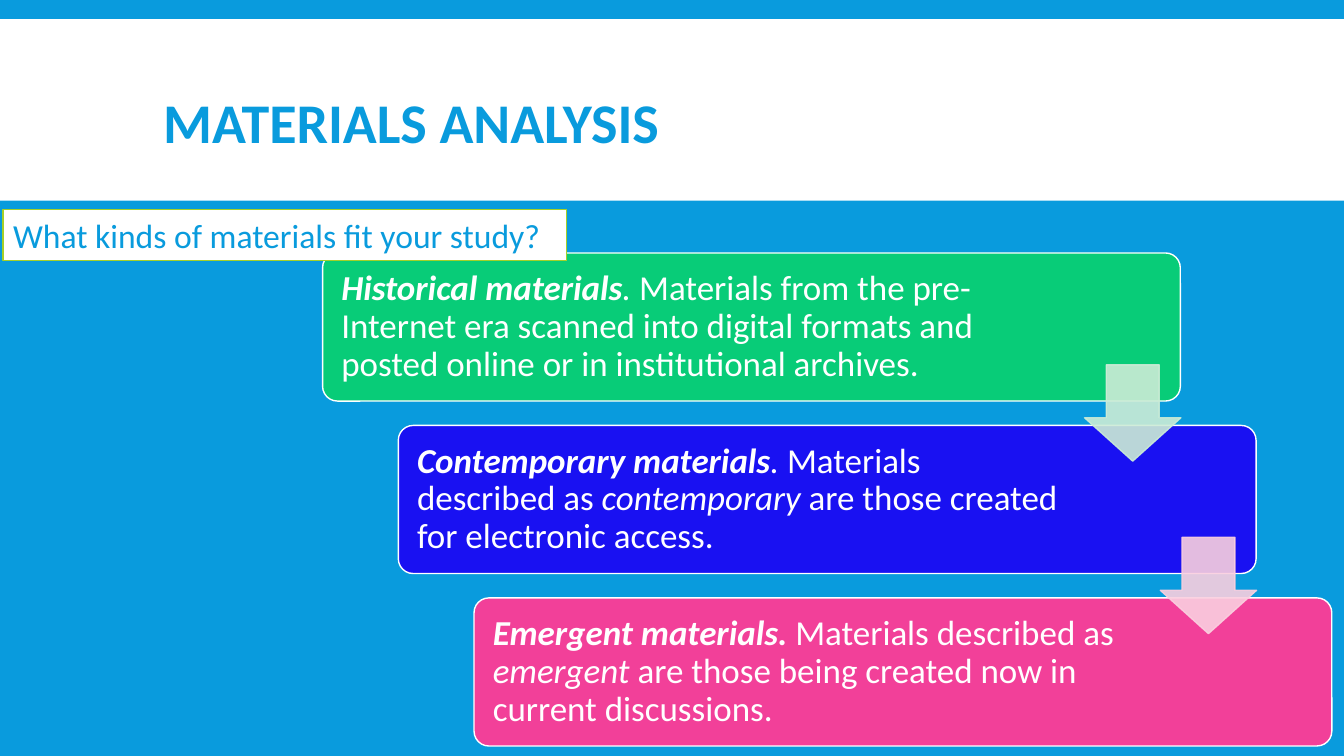
"""Build the Materials Analysis slide: a title band, a question and three stepped cards."""
from lxml import etree
from pptx import Presentation
from pptx.dml.color import RGBColor
from pptx.enum import shapes, text
from pptx.oxml import ns
from pptx.util import Pt

BLUE = RGBColor(0x09, 0x9B, 0xDD)
WHITE = RGBColor(0xFF, 0xFF, 0xFF)
LIME = RGBColor(0xA5, 0xD0, 0x28)
GREEN = RGBColor(0x08, 0xCC, 0x78)
INDIGO = RGBColor(0x19, 0x11, 0xF2)
PINK = RGBColor(0xF2, 0x40, 0x99)
PALE_GREEN = RGBColor(0xCC, 0xEC, 0xD6)
PALE_PINK = RGBColor(0xFA, 0xCF, 0xDF)

CARD_LEFT, CARD_TOP, CARD_WIDTH, CARD_HEIGHT = 230.4, 180.7, 612.7, 105.8
STEP_X, STEP_Y = 54.1, 123.2
ARROW_LEFT, ARROW_TOP, ARROW_SIZE = 774.7, 260.6, 68.8

CARDS = [
    (GREEN, 118, [
        ("Historical materials", True, True),
        (". ", False, True),
        ("Materials from the pre-Internet era scanned into digital formats "
         "and posted online or in institutional archives.", False, False),
    ]),
    (INDIGO, 133, [
        ("Contemporary materials", True, True),
        (". ", False, True),
        ("Materials described as ", False, False),
        ("contemporary ", False, True),
        ("are those created for electronic access.", False, False),
    ]),
    (PINK, 133, [
        ("Emergent materials. ", True, True),
        ("Materials described as ", False, False),
        ("emergent ", False, True),
        ("are those being created now in current discussions.", False, False),
    ]),
]


def add_box(kind, left, top, width, height, fill, line=None):
    sp = slide.shapes.add_shape(kind, Pt(left), Pt(top), Pt(width), Pt(height))
    sp.shadow.inherit = False
    sp.fill.solid()
    sp.fill.fore_color.rgb = fill
    if line is None:
        sp.line.fill.background()
    else:
        sp.line.color.rgb = line
        sp.line.width = Pt(1)
    return sp


def add_run(p, words, size, color, bold=False, italic=False):
    r = p.add_run()
    r.text = words
    r.font.name = "Calibri"
    r.font.size = Pt(size)
    r.font.color.rgb = color
    r.font.bold = bold
    r.font.italic = italic


prs = Presentation()
prs.slide_width, prs.slide_height = Pt(960), Pt(540)
slide = prs.slides.add_slide(prs.slide_layouts[5])
slide.background.fill.solid()
slide.background.fill.fore_color.rgb = BLUE

band = add_box(shapes.MSO_SHAPE.RECTANGLE, 0, 13.7, 960, 129.6, WHITE)
slide.shapes._spTree.insert(2, band._element)

title = slide.shapes.title
title.left, title.top, title.width, title.height = Pt(109.4), Pt(31), Pt(770.4), Pt(118.8)
tf = title.text_frame
tf.vertical_anchor = text.MSO_ANCHOR.MIDDLE
p = tf.paragraphs[0]
p.alignment = text.PP_ALIGN.LEFT
p.line_spacing = 0.85
add_run(p, "MATERIALS ANALYSIS", 40, BLUE, bold=True)

for i, (color, right_margin, runs) in enumerate(CARDS):
    card = add_box(shapes.MSO_SHAPE.ROUNDED_RECTANGLE, CARD_LEFT + i * STEP_X,
                   CARD_TOP + i * STEP_Y, CARD_WIDTH, CARD_HEIGHT, color, WHITE)
    card.adjustments[0] = 0.1
    tf = card.text_frame
    tf.word_wrap = True
    tf.vertical_anchor = text.MSO_ANCHOR.MIDDLE
    tf.margin_left, tf.margin_right = Pt(10.3), Pt(right_margin)
    tf.margin_top = tf.margin_bottom = Pt(7.2)
    p = tf.paragraphs[0]
    p.alignment = text.PP_ALIGN.LEFT
    p.line_spacing = 0.9
    for words, bold, italic in runs:
        add_run(p, words, 25, WHITE, bold, italic)

for i, color in enumerate([PALE_GREEN, PALE_PINK]):
    arrow = add_box(shapes.MSO_SHAPE.DOWN_ARROW, ARROW_LEFT + i * STEP_X,
                    ARROW_TOP + i * STEP_Y, ARROW_SIZE, ARROW_SIZE, color, color)
    arrow.adjustments[0], arrow.adjustments[1] = 0.55, 0.45
    for clr in arrow._element.spPr.iter(ns.qn("a:srgbClr")):
        etree.SubElement(clr, ns.qn("a:alpha")).set("val", "90000")

question = add_box(shapes.MSO_SHAPE.RECTANGLE, 2.2, 149.8, 402.5, 36.3, WHITE, LIME)
tf = question.text_frame
tf.word_wrap = True
tf.vertical_anchor = text.MSO_ANCHOR.TOP
tf.auto_size = text.MSO_AUTO_SIZE.SHAPE_TO_FIT_TEXT
p = tf.paragraphs[0]
p.alignment = text.PP_ALIGN.LEFT
add_run(p, "What kinds of materials fit your study?", 24, BLUE)

prs.save("out.pptx")
